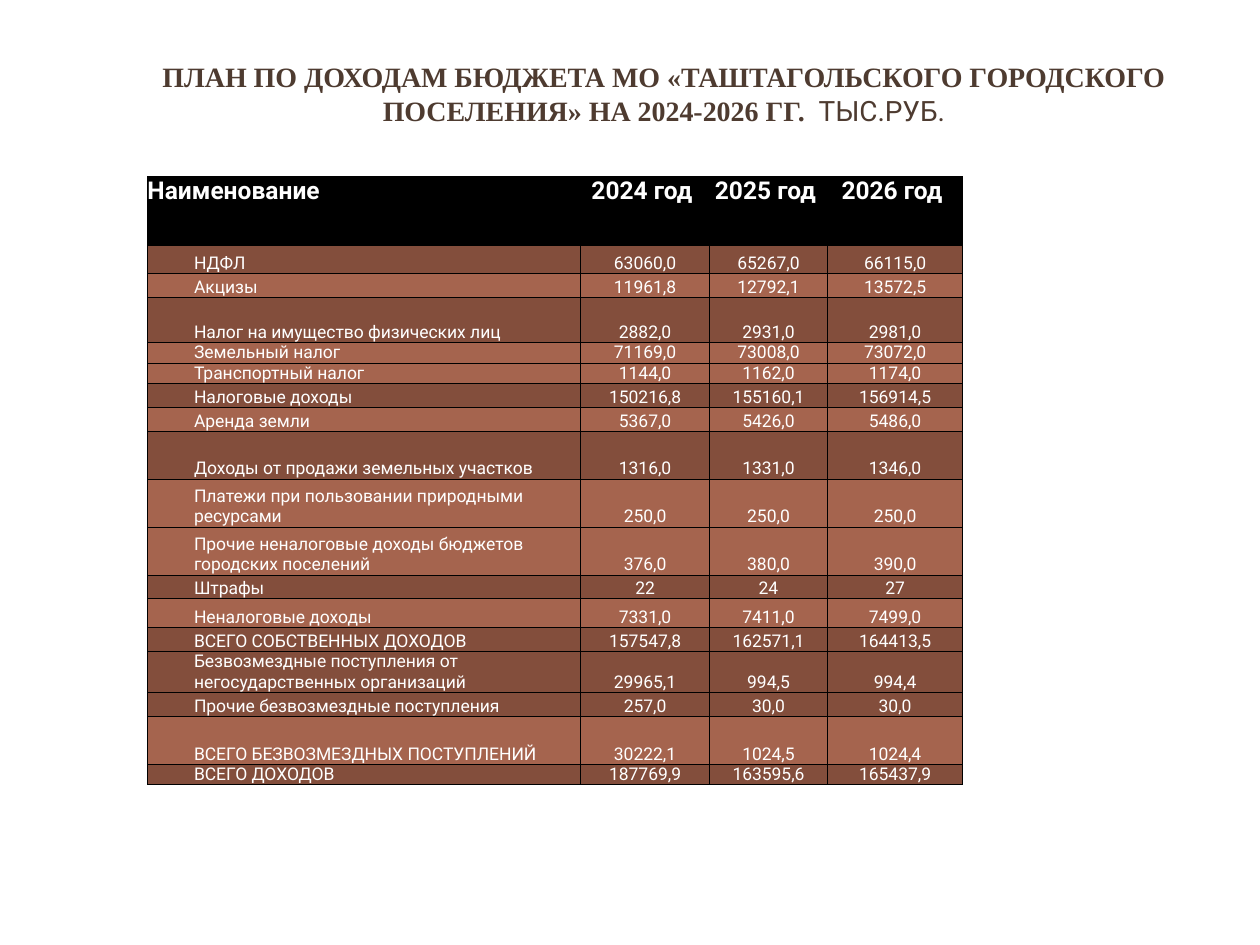
from pptx import Presentation
from pptx.dml.color import RGBColor
from pptx.enum.text import MSO_ANCHOR as Anchor, MSO_AUTO_SIZE as AutoSize, PP_ALIGN as Align
from pptx.oxml.ns import qn
from pptx.util import Inches, Pt
from lxml.etree import SubElement

DARK, LIGHT = "834E3C", "A5644E"
COLUMN_WIDTHS = [3.44, 1.02, 0.94, 1.07]
HEADER = ["Наименование", "2024 год ", "2025 год ", "2026 год "]
HEADER_HEIGHT = 0.55
INCOME = [
    (0.22, DARK, "НДФЛ", "63060,0", "65267,0", "66115,0"),
    (0.19, LIGHT, "Акцизы", "11961,8", "12792,1", "13572,5"),
    (0.36, DARK, "Налог на имущество физических лиц", "2882,0", "2931,0", "2981,0"),
    (0.16, LIGHT, "Земельный налог", "71169,0", "73008,0", "73072,0"),
    (0.16, LIGHT, "Транспортный налог", "1144,0", "1162,0", "1174,0"),
    (0.19, DARK, "Налоговые доходы", "150216,8", "155160,1", "156914,5"),
    (0.19, LIGHT, "Аренда земли", "5367,0", "5426,0", "5486,0"),
    (0.38, DARK, "Доходы от продажи земельных участков", "1316,0", "1331,0", "1346,0"),
    (0.38, LIGHT, "Платежи при пользовании природными ресурсами", "250,0", "250,0", "250,0"),
    (0.38, LIGHT, "Прочие неналоговые доходы бюджетов городских поселений", "376,0", "380,0", "390,0"),
    (0.19, DARK, "Штрафы", "22", "24", "27"),
    (0.23, LIGHT, "Неналоговые доходы", "7331,0", "7411,0", "7499,0"),
    (0.19, DARK, "ВСЕГО СОБСТВЕННЫХ ДОХОДОВ", "157547,8", "162571,1", "164413,5"),
    (0.19, DARK, "Безвозмездные поступления от негосударственных организаций", "29965,1", "994,5", "994,4"),
    (0.19, DARK, "Прочие безвозмездные поступления", "257,0", "30,0", "30,0"),
    (0.38, LIGHT, "ВСЕГО БЕЗВОЗМЕЗДНЫХ ПОСТУПЛЕНИЙ", "30222,1", "1024,5", "1024,4"),
    (0.16, DARK, "ВСЕГО ДОХОДОВ", "187769,9", "163595,6", "165437,9"),
]


def color(value):
    return RGBColor.from_string(value)


class BudgetPage:
    body_font = "Roboto"
    title_font = "Times New Roman"
    title_color = "4E3B30"
    text_color = "FFFFFF"
    line_color = "000000"
    header_fill = "000000"

    def __init__(self, deck):
        self.page = deck.slides.add_slide(deck.slide_layouts[5])

    def span(self, para, text, size, ink, font, bold=False):
        span = para.add_run()
        span.text = text
        span.font.size = Pt(size)
        span.font.name = font
        span.font.bold = bold
        span.font.color.rgb = color(ink)

    def title(self, name, unit):
        box = self.page.shapes.title
        box.left, box.top = Inches(0.78), Inches(0.31)
        box.width, box.height = Inches(8.98), Inches(0.86)
        frame = box.text_frame
        frame.word_wrap = True
        frame.auto_size = AutoSize.NONE
        frame.vertical_anchor = Anchor.MIDDLE
        para = frame.paragraphs[0]
        para.alignment = Align.CENTER
        self.span(para, name, 16, self.title_color, self.title_font, True)
        self.span(para, unit, 16, self.title_color, self.body_font)

    def borders(self, cell):
        properties = cell._tc.get_or_add_tcPr()
        for side in ("a:lnL", "a:lnR", "a:lnT", "a:lnB"):
            line = SubElement(properties, qn(side), w=str(Pt(0.5)))
            fill = SubElement(line, qn("a:solidFill"))
            SubElement(fill, qn("a:srgbClr"), val=self.line_color)

    def cell(self, cell, text, fill, first, header):
        self.borders(cell)
        cell.fill.solid()
        cell.fill.fore_color.rgb = color(fill)
        cell.margin_left = Inches(0.37 if first and not header else 0)
        cell.margin_right = cell.margin_top = cell.margin_bottom = 0
        cell.vertical_anchor = Anchor.TOP if header else Anchor.BOTTOM
        para = cell.text_frame.paragraphs[0]
        para.alignment = Align.LEFT if first else Align.CENTER
        self.span(para, text, 14 if header else 10, self.text_color, self.body_font, header)

    def table(self, left, top, widths, rows):
        height = sum(row[0] for row in rows)
        table = self.page.shapes.add_table(
            len(rows), len(widths), Inches(left), Inches(top),
            Inches(sum(widths)), Inches(height)).table
        for column, width in zip(table.columns, widths):
            column.width = Inches(width)
        for row_index, (row_height, fill, *texts) in enumerate(rows):
            table.rows[row_index].height = Inches(row_height)
            for column_index, text in enumerate(texts):
                self.cell(table.cell(row_index, column_index), text, fill,
                          column_index == 0, row_index == 0)


def main():
    deck = Presentation()
    deck.slide_width, deck.slide_height = Inches(10), Inches(7.5)
    budget = BudgetPage(deck)
    budget.title("ПЛАН ПО ДОХОДАМ БЮДЖЕТА МО «ТАШТАГОЛЬСКОГО ГОРОДСКОГО "
                 "ПОСЕЛЕНИЯ» НА 2024-2026 ГГ. ", " ТЫС.РУБ.")
    header = (HEADER_HEIGHT, budget.header_fill, *HEADER)
    budget.table(1.17, 1.4, COLUMN_WIDTHS, [header, *INCOME])
    deck.save("out.pptx")


if __name__ == "__main__":
    main()
